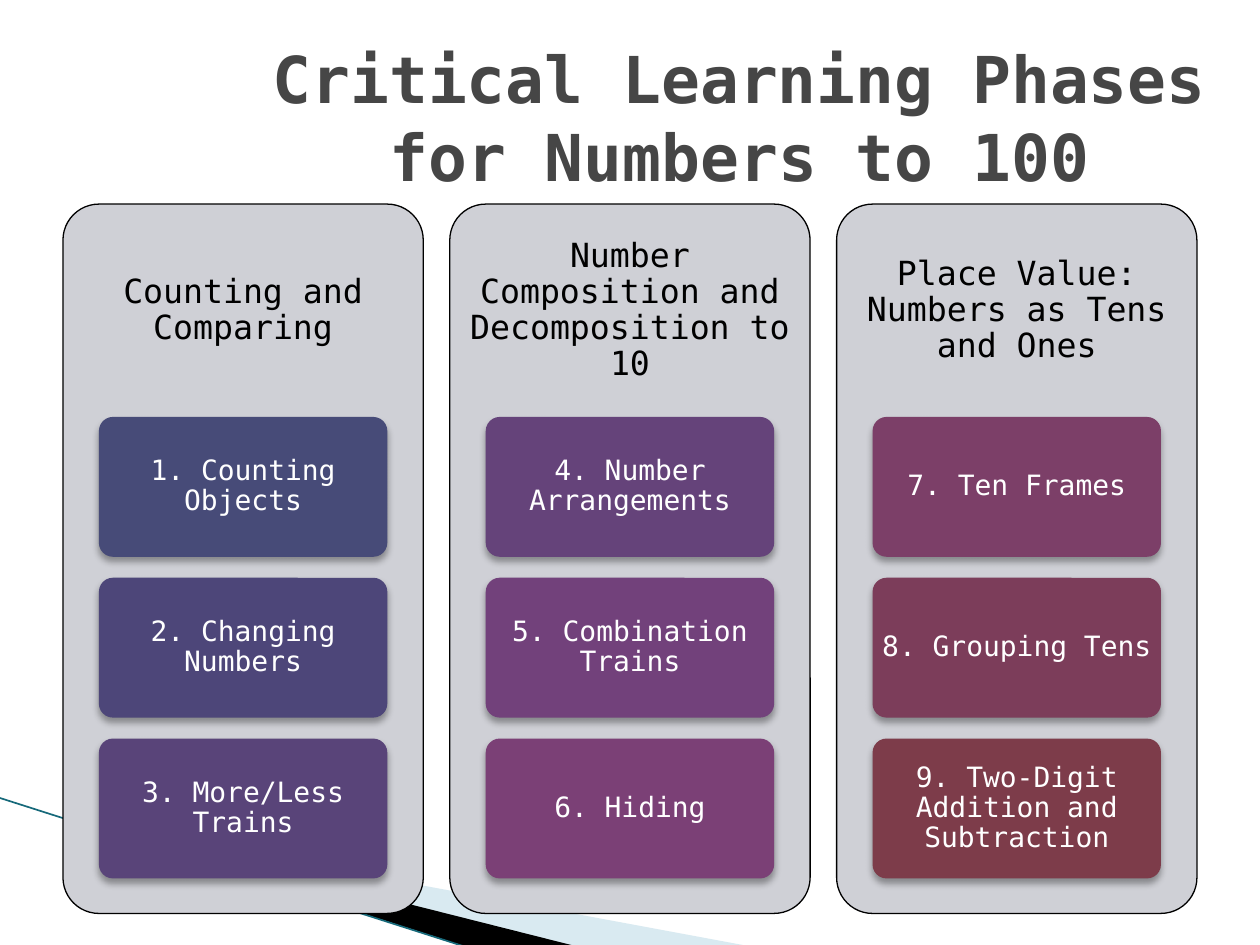
from lxml import etree
from pptx import Presentation
from pptx.dml.color import RGBColor
from pptx.enum import shapes, text
from pptx.oxml.ns import qn
from pptx.util import Pt

TITLE = "Critical Learning Phases for Numbers to 100"
# Phase heading, then (card text, card colour)
PHASES = [
    ("Counting and Comparing", [
        ("1. Counting Objects", "474B78"),
        ("2. Changing Numbers", "4D4679"),
        ("3. More/Less Trains", "594479")]),
    ("Number Composition and Decomposition to 10", [
        ("4. Number Arrangements", "65437A"),
        ("5. Combination Trains", "72417B"),
        ("6. Hiding", "7B4076")]),
    ("Place Value: Numbers as Tens and Ones", [
        ("7. Ten Frames", "7C3F68"),
        ("8. Grouping Tens", "7C3D5A"),
        ("9. Two-Digit Addition and Subtraction", "7D3C4A")]),
]
COLORS = {"title": "464646", "panel": "CFD0D6", "black": "000000",
          "white": "FFFFFF", "sweep": "A0CBDC", "edge": "16697A"}
FONT = "DejaVu Sans Mono"

# Layout in points
PANEL_X, PANEL_Y, PANEL_W, PANEL_H = 36, 116.64, 205.92, 405.36
COLUMN_PITCH = 221.04
HEADING_H = 121.6
CARD_W, CARD_H, CARD_PITCH = 164.8, 79.9, 91.9
CARD_Y = PANEL_Y + HEADING_H
SWEEPS = [
    ([(39.6, 468.5), (428.4, 540.7), (328.3, 540.7), (39.6, 468)], "sweep", 40),
    ([(38.2, 467.3), (329, 540.7), (267.8, 541.4), (38.9, 468)], "black", 100),
]


def rgb(name):
    return RGBColor.from_string(COLORS.get(name, name))


def write(shape, content, size, color, bold=False, inset=(7.2, 3.6), spacing=1.0):
    tf = shape.text_frame
    tf.word_wrap = True
    tf.vertical_anchor = text.MSO_ANCHOR.MIDDLE
    tf.margin_left = tf.margin_right = Pt(inset[0])
    tf.margin_top = tf.margin_bottom = Pt(inset[1])
    p = tf.paragraphs[0]
    p.alignment = text.PP_ALIGN.CENTER
    p.line_spacing = spacing
    r = p.add_run()
    r.text = content
    r.font.name, r.font.size, r.font.bold = FONT, Pt(size), bold
    r.font.color.rgb = rgb(color)


def fill(shape, color, alpha=100):
    shape.shadow.inherit = False
    shape.fill.solid()
    shape.fill.fore_color.rgb = rgb(color)
    shape.line.fill.background()
    if alpha < 100:
        clr = shape._element.spPr.find(qn("a:solidFill"))[0]
        etree.SubElement(clr, qn("a:alpha"), val=str(alpha * 1000))


def rounded(s, x, y, w, h, color):
    sp = s.shapes.add_shape(shapes.MSO_SHAPE.ROUNDED_RECTANGLE,
                            Pt(x), Pt(y), Pt(w), Pt(h))
    sp.adjustments[0] = 0.1
    fill(sp, color)
    return sp


def drop_shadow(shape):
    effects = shape._element.spPr.find(qn("a:effectLst"))
    shadow = etree.SubElement(effects, qn("a:outerShdw"), blurRad=str(Pt(4)),
                              dist=str(Pt(3)), dir="5400000", rotWithShape="0")
    clr = etree.SubElement(shadow, qn("a:srgbClr"), val=COLORS["black"])
    etree.SubElement(clr, qn("a:alpha"), val="35000")


def add_background(s):
    for points, color, alpha in SWEEPS:
        start, *rest = [(Pt(x), Pt(y)) for x, y in points]
        builder = s.shapes.build_freeform(*start)
        builder.add_line_segments(rest, close=True)
        fill(builder.convert_to_shape(), color, alpha)
    edge = s.shapes.add_connector(shapes.MSO_CONNECTOR.STRAIGHT,
                                  Pt(-0.7), Pt(455.8), Pt(267.1), Pt(541.4))
    edge.line.color.rgb = rgb("edge")
    edge.line.width = Pt(0.95)
    etree.SubElement(edge._element.spPr, qn("a:effectLst"))


def add_phase(s, x, heading, cards):
    panel = rounded(s, x, PANEL_Y, PANEL_W, PANEL_H, "panel")
    panel.line.color.rgb = rgb("black")
    panel.line.width = Pt(0.75)
    box = s.shapes.add_textbox(Pt(x), Pt(PANEL_Y), Pt(PANEL_W), Pt(HEADING_H))
    write(box, heading, 19, "black", inset=(5.7, 5.7), spacing=0.9)
    for row, (label, color) in enumerate(cards):
        card = rounded(s, x + (PANEL_W - CARD_W) / 2, CARD_Y + row * CARD_PITCH,
                       CARD_W, CARD_H, color)
        drop_shadow(card)
        write(card, label, 16, "white", inset=(0.6, 0), spacing=0.9)


def main():
    prs = Presentation()
    prs.slide_width, prs.slide_height = Pt(720), Pt(540)
    s = prs.slides.add_slide(prs.slide_layouts[5])
    add_background(s)

    # Title
    title = s.shapes.title
    title.left, title.top = Pt(131.8), Pt(21.6)
    title.width, title.height = Pt(581.8), Pt(90)
    write(title, TITLE, 36.9, "title", bold=True)

    # Phase columns
    for col, (heading, cards) in enumerate(PHASES):
        add_phase(s, PANEL_X + col * COLUMN_PITCH, heading, cards)
    prs.save("out.pptx")


if __name__ == "__main__":
    main()
